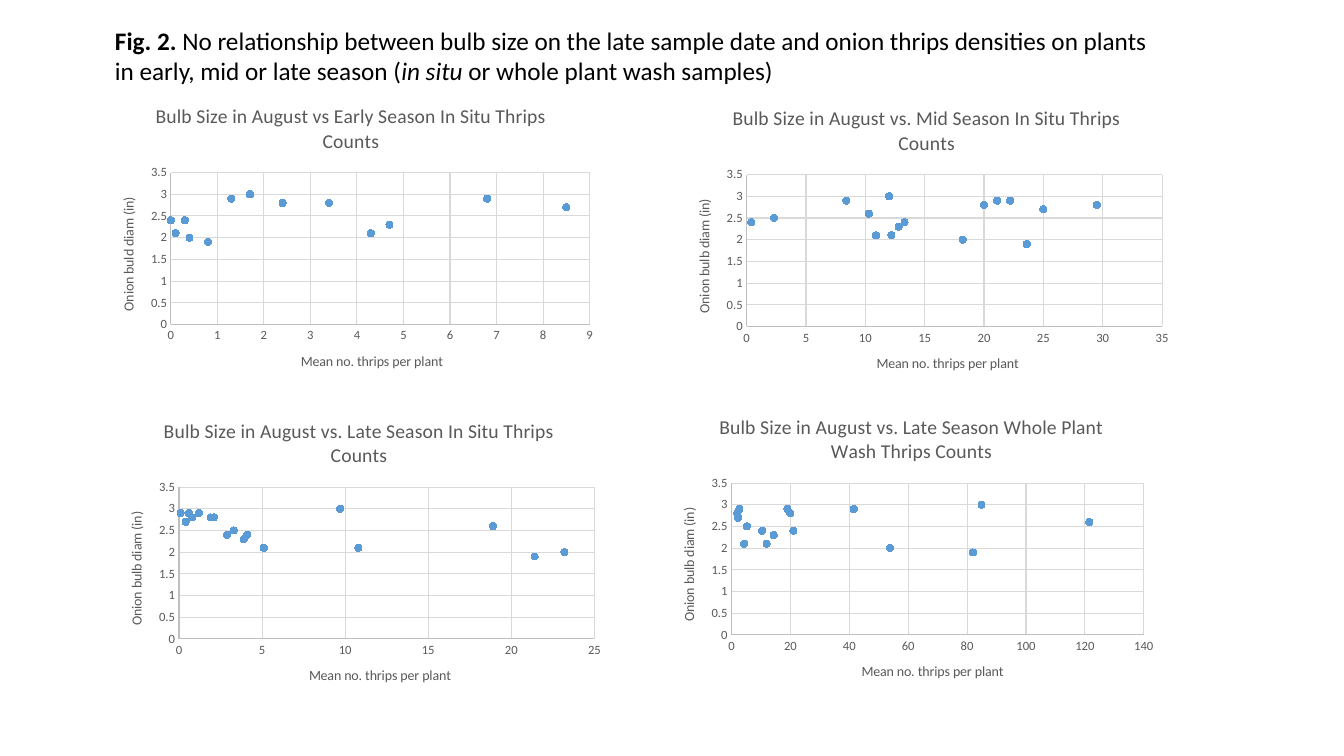
from dataclasses import dataclass

from pptx import Presentation
from pptx.chart.data import XyChartData
from pptx.dml.color import RGBColor
from pptx.enum.chart import XL_CHART_TYPE, XL_MARKER_STYLE, XL_TICK_MARK
from pptx.enum.text import MSO_ANCHOR, PP_ALIGN
from pptx.util import Inches, Pt

SCATTER = XL_CHART_TYPE.XY_SCATTER
CIRCLE = XL_MARKER_STYLE.CIRCLE
NO_TICK = XL_TICK_MARK.NONE
TOP = MSO_ANCHOR.TOP
LEFT = PP_ALIGN.LEFT


@dataclass(frozen=True)
class Theme:
    font: str = "Calibri"
    caption_color: str = "000000"
    label_color: str = "595959"
    axis_color: str = "BFBFBF"
    grid_color: str = "D9D9D9"
    point_color: str = "5B9BD5"
    caption_size: float = 18
    chart_title_size: float = 14
    axis_title_size: float = 10
    tick_size: float = 9
    line_width: float = 0.75
    marker_size: int = 5


@dataclass(frozen=True)
class ThripsPlot:
    left: float
    top: float
    heading: str
    thrips: tuple
    bulb_label: str = "Onion bulb diam (in)"


THEME = Theme()
CHART_WIDTH, CHART_HEIGHT = 5, 3
THRIPS_LABEL = "Mean no. thrips per plant"
BULB_DIAMETERS = (2.4, 2, 2.1, 2.8, 2.5, 3, 2.4, 2.9, 2.7, 2.6, 1.9, 2.1, 2.3, 2.8, 2.9, 2.8, 2.9)

PLOTS = (
    ThripsPlot(0.98, 0.87, "Bulb Size in August vs Early Season In Situ Thrips Counts",
               (0, 0.4, 0.1, None, None, 1.7, 0.3, 6.8, 8.5, None, 0.8, 4.3, 4.7, 2.4, 1.3, 3.4, None),
               "Onion buld diam (in)"),
    ThripsPlot(6.69, 0.89, "Bulb Size in August vs. Mid Season In Situ Thrips Counts",
               (0.4, 18.2, 12.2, None, 2.3, 12, 13.3, 21.1, 25, 10.3, 23.6, 10.9, 12.8, 20, 22.2, 29.5, 8.4)),
    ThripsPlot(1.06, 3.99, "Bulb Size in August vs. Late Season In Situ Thrips Counts",
               (4.1, 23.2, 10.8, 0.8, 3.3, 9.7, 2.9, 0.1, 0.4, 18.9, 21.4, 5.1, 3.9, 2.1, 1.2, 1.9, 0.6)),
    ThripsPlot(6.54, 3.95, "Bulb Size in August vs. Late Season Whole Plant Wash Thrips Counts",
               (21, 53.8, 11.9, 2, 5.2, 84.9, 10.4, 2.7, 2.2, 121.5, 82, 4.3, 14.3, 20, 19, 2, 41.5)),
)

CAPTION = (
    (("Fig. 2. ", {"bold": True}),
     ("No relationship between bulb size on the late sample date and onion thrips densities on plants", {})),
    (("in early, mid or late season (", {}),
     ("in situ ", {"italic": True}),
     ("or whole plant wash samples)", {})),
)


def style_font(font, size: float, color: str, bold: bool = False, italic: bool = False) -> None:
    font.name = THEME.font
    font.size = Pt(size)
    font.bold = bold
    font.italic = italic
    font.color.rgb = RGBColor.from_string(color)


def add_text(paragraph, text: str, **style) -> None:
    run = paragraph.add_run()
    run.text = text
    style_font(run.font, **style)


def style_line(line, color: str) -> None:
    line.color.rgb = RGBColor.from_string(color)
    line.width = Pt(THEME.line_width)


def style_axis(axis, label: str) -> None:
    axis.major_tick_mark = axis.minor_tick_mark = NO_TICK
    axis.has_major_gridlines = True
    style_line(axis.major_gridlines.format.line, THEME.grid_color)
    style_line(axis.format.line, THEME.axis_color)
    style_font(axis.tick_labels.font, THEME.tick_size, THEME.label_color)
    add_text(axis.axis_title.text_frame.paragraphs[0], label,
             size=THEME.axis_title_size, color=THEME.label_color)


def clear_missing_counts(points) -> None:
    for missing in points._element.xpath('c:xVal//c:pt[c:v="None"]'):
        missing.getparent().remove(missing)


def add_caption(slide) -> None:
    caption = slide.shapes.title
    caption.left, caption.top = Inches(1.04), Inches(0.2)
    caption.width, caption.height = Inches(10.77), Inches(0.71)
    frame = caption.text_frame
    frame.word_wrap = False
    frame.vertical_anchor = TOP
    for index, parts in enumerate(CAPTION):
        paragraph = frame.add_paragraph() if index else frame.paragraphs[0]
        paragraph.alignment = LEFT
        paragraph.space_before = Pt(0)
        for text, emphasis in parts:
            add_text(paragraph, text, size=THEME.caption_size, color=THEME.caption_color, **emphasis)


def add_plot(slide, plot: ThripsPlot) -> None:
    data = XyChartData()
    samples = data.add_series("Series 1")
    for thrips, diameter in zip(plot.thrips, BULB_DIAMETERS):
        samples.add_data_point(thrips, diameter)
    chart = slide.shapes.add_chart(SCATTER, Inches(plot.left), Inches(plot.top),
                                   Inches(CHART_WIDTH), Inches(CHART_HEIGHT), data).chart
    style_font(chart.font, THEME.axis_title_size, THEME.caption_color)
    chart.has_legend = False
    chart.has_title = True
    chart.chart_title.include_in_layout = False
    add_text(chart.chart_title.text_frame.paragraphs[0], plot.heading,
             size=THEME.chart_title_size, color=THEME.label_color)
    chart.plots[0].vary_by_categories = False
    style_axis(chart.category_axis, THRIPS_LABEL)
    style_axis(chart.value_axis, plot.bulb_label)

    points = chart.plots[0].series[0]
    clear_missing_counts(points)
    points.smooth = False
    points.format.line.fill.background()
    points.marker.style = CIRCLE
    points.marker.size = THEME.marker_size
    points.marker.format.fill.solid()
    points.marker.format.fill.fore_color.rgb = RGBColor.from_string(THEME.point_color)
    style_line(points.marker.format.line, THEME.point_color)


def main() -> None:
    deck = Presentation()
    deck.slide_width, deck.slide_height = Inches(13.33), Inches(7.5)
    slide = deck.slides.add_slide(deck.slide_layouts[5])
    add_caption(slide)
    for plot in PLOTS:
        add_plot(slide, plot)
    deck.save("out.pptx")


if __name__ == "__main__":
    main()
